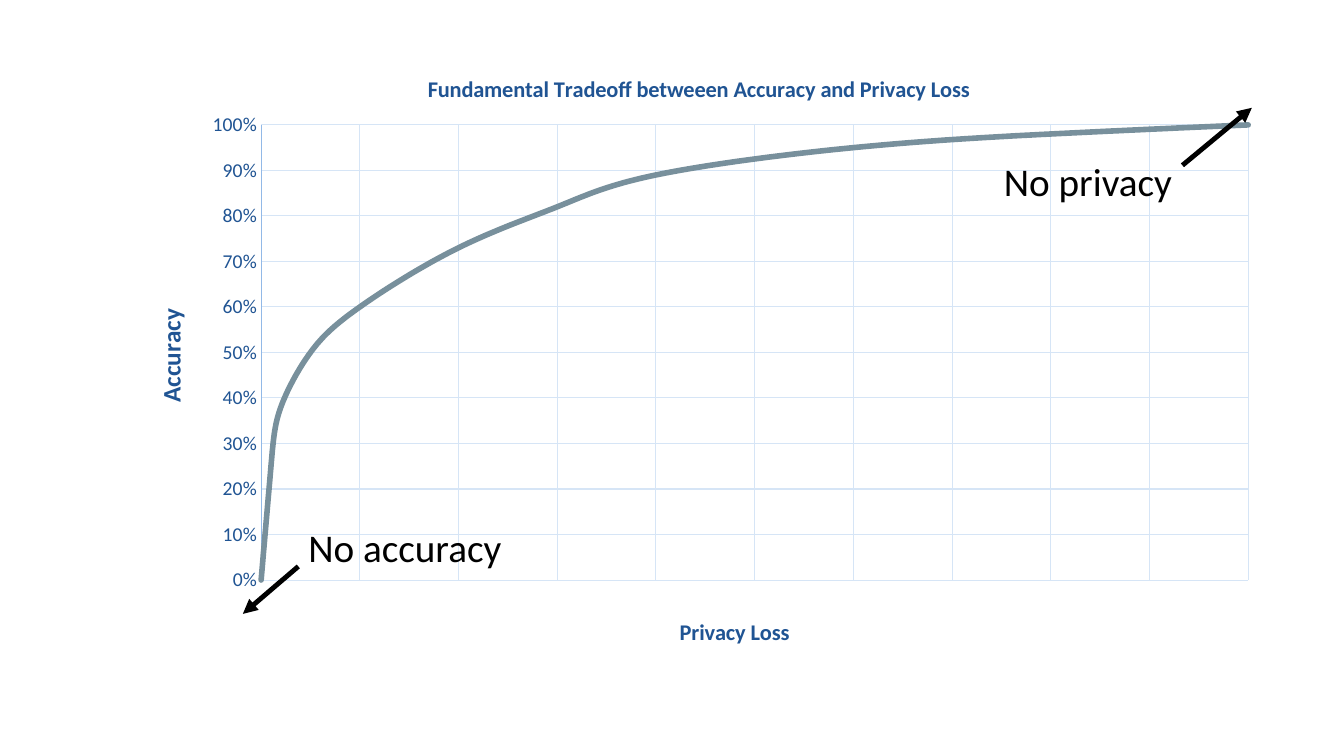
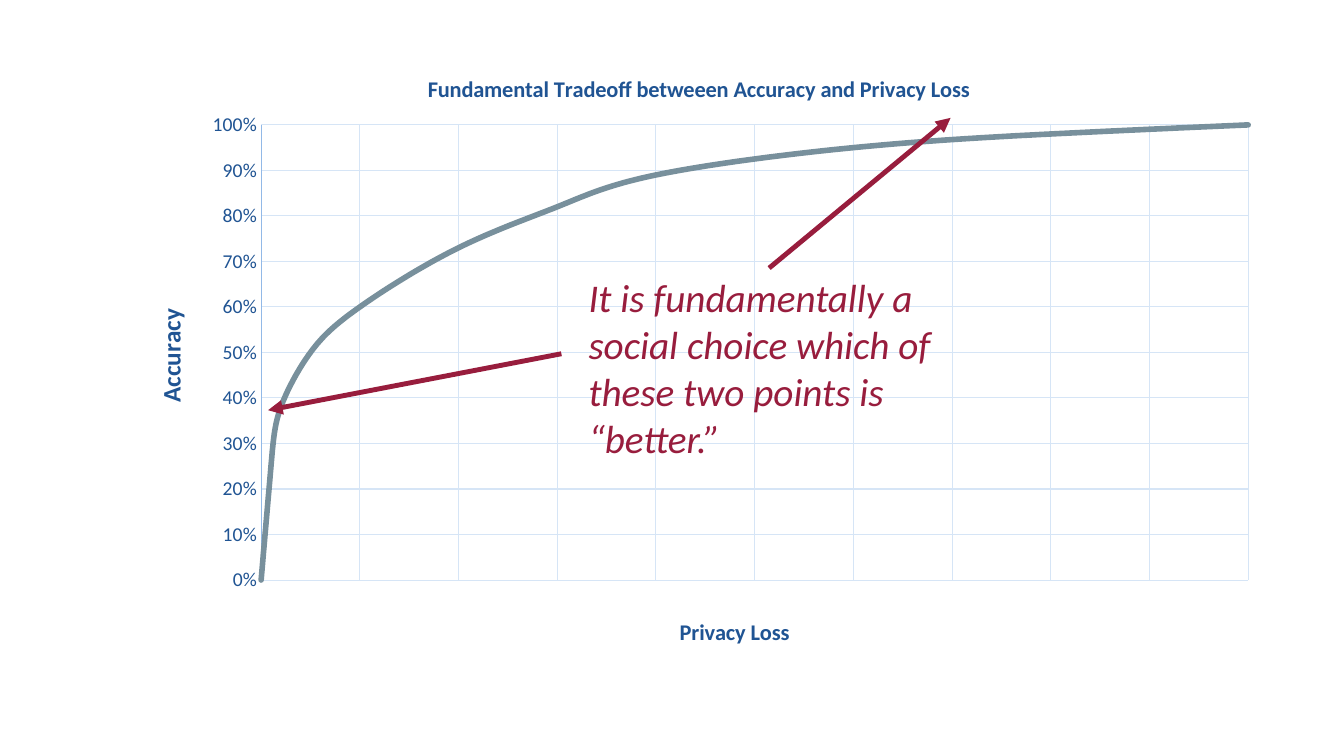
from typing import NamedTuple

from lxml.etree import SubElement
from pptx import Presentation
from pptx.chart.data import XyChartData
from pptx.dml.color import RGBColor
from pptx.enum.chart import XL_CHART_TYPE, XL_TICK_LABEL_POSITION, XL_TICK_MARK
from pptx.enum.shapes import MSO_CONNECTOR
from pptx.enum.text import MSO_AUTO_SIZE
from pptx.oxml.ns import qn
from pptx.util import Pt

COLORS = {
    "ink": "000000",
    "crimson": "981D3D",
    "navy": "205493",
    "axis": "92B9E7",
    "grid": "D6E5F6",
    "curve": "78909C",
}
FONT = "Calibri"
PRIVACY_LOSS = (0, 0.1, 0.2, 0.5, 1, 2, 3, 4, 6, 8, 10)
ACCURACY = (0, 0.25, 0.38, 0.5, 0.6, 0.73, 0.82, 0.89, 0.95, 0.98, 1)


class Note(NamedTuple):
    """A text label with its frame in points."""

    text: str
    left: float
    top: float
    width: float
    height: float


class Arrow(NamedTuple):
    """An arrow from a start point to its head, in points."""

    start_x: float
    start_y: float
    end_x: float
    end_y: float


class Scene(NamedTuple):
    """The annotations laid over the chart on one slide."""

    color: str
    italic: bool
    notes: tuple[Note, ...]
    arrows: tuple[Arrow, ...]


SCENES = (
    Scene(
        "ink",
        False,
        (
            Note("No privacy", 710, 108.7, 171.4, 41),
            Note("No accuracy", 213.1, 370.1, 171.4, 41),
        ),
        (Arrow(213.1, 404.6, 173.5, 438.5), Arrow(844.6, 118.1, 894.2, 77)),
    ),
    Scene(
        "crimson",
        True,
        (
            Note(
                "It is fundamentally a social choice which of these two points is “better.”",
                413.3, 191.5, 296.6, 143.3,
            ),
        ),
        (Arrow(401, 252.7, 191.5, 293), Arrow(549.4, 191.5, 679, 84.2)),
    ),
)


def style_font(font, color: str, size: float, bold: bool = False, italic: bool = False) -> None:
    """Apply the deck font with the given look."""
    values = {"name": FONT, "size": Pt(size), "bold": bold, "italic": italic}
    for name, value in values.items():
        setattr(font, name, value)
    font.color.rgb = RGBColor.from_string(COLORS[color])


def style_line(line, color: str, width: float) -> None:
    """Give a line its colour and width."""
    line.color.rgb = RGBColor.from_string(COLORS[color])
    line.width = Pt(width)


def place(element, index: int, **fractions: float) -> None:
    """Fix a chart part's position as fractions of the chart frame."""
    for old in element.findall(qn("c:layout")):
        element.remove(old)
    layout = SubElement(element, qn("c:layout"))
    element.insert(index, layout)
    manual = SubElement(layout, qn("c:manualLayout"))
    if "w" in fractions:
        SubElement(manual, qn("c:layoutTarget")).set("val", "inner")
    for mode in ("xMode", "yMode"):
        SubElement(manual, qn(f"c:{mode}")).set("val", "edge")
    for name, value in fractions.items():
        SubElement(manual, qn(f"c:{name}")).set("val", str(value))


def add_title(owner, text: str, size: float, x: float, y: float) -> None:
    """Title a chart or an axis at a fixed position."""
    title = getattr(owner, "chart_title", None) or owner.axis_title
    para = title.text_frame.paragraphs[0]
    span = para.add_run()
    span.text = text
    style_font(span.font, "navy", size, bold=True)
    place(title._element, 1, x=x, y=y)


def style_axis(axis, maximum: float, unit: float) -> None:
    """Set the scale and gridlines of an axis."""
    values = {
        "minimum_scale": 0,
        "maximum_scale": maximum,
        "major_unit": unit,
        "has_major_gridlines": True,
        "major_tick_mark": XL_TICK_MARK.NONE,
        "minor_tick_mark": XL_TICK_MARK.NONE,
    }
    for name, value in values.items():
        setattr(axis, name, value)
    style_line(axis.major_gridlines.format.line, "grid", 0.75)


def add_tradeoff_chart(page) -> None:
    """Draw the accuracy curve against privacy loss."""
    data = XyChartData()
    points = data.add_series("Series 1")
    for loss, accuracy in zip(PRIVACY_LOSS, ACCURACY):
        points.add_data_point(loss, accuracy)
    chart = page.shapes.add_chart(
        XL_CHART_TYPE.XY_SCATTER_SMOOTH_NO_MARKERS,
        Pt(90), Pt(32.4), Pt(818), Pt(440.6), data,
    ).chart
    chart.has_legend = False
    style_font(chart.font, "ink", 10)
    plot = chart.plots[0]
    plot.vary_by_categories = False
    curve = plot.series[0]
    curve._element.get_or_add_smooth().val = True
    style_line(curve.format.line, "curve", 4)
    curve.format.line._get_or_add_ln().set("cap", "rnd")

    loss_axis, accuracy_axis = chart.category_axis, chart.value_axis
    style_axis(loss_axis, 10, 1)
    loss_axis.visible = False
    style_axis(accuracy_axis, 1, 0.1)
    style_line(accuracy_axis.format.line, "axis", 0.75)
    labels = accuracy_axis.tick_labels
    labels.number_format = "0%"
    labels.number_format_is_linked = False
    accuracy_axis.tick_label_position = XL_TICK_LABEL_POSITION.NEXT_TO_AXIS
    style_font(labels.font, "navy", 14)

    add_title(chart, "Fundamental Tradeoff betweeen Accuracy and Privacy Loss", 16, 0.26, 0.04)
    add_title(loss_axis, "Privacy Loss", 16, 0.48, 0.92)
    add_title(accuracy_axis, "Accuracy", 18, 0.02, 0.42)
    place(chart._chartSpace.chart.plotArea, 0, x=0.118, y=0.129, w=0.862, h=0.738)


def add_note(page, note: Note, scene: Scene) -> None:
    """Write one label in the scene's style."""
    box = page.shapes.add_textbox(*map(Pt, note[1:]))
    frame = box.text_frame
    frame.word_wrap = True
    frame.auto_size = MSO_AUTO_SIZE.SHAPE_TO_FIT_TEXT
    span = frame.paragraphs[0].add_run()
    span.text = note.text
    style_font(span.font, scene.color, 28, italic=scene.italic)


def add_arrow(page, arrow: Arrow, color: str) -> None:
    """Draw a straight arrow without shadow."""
    connector = page.shapes.add_connector(MSO_CONNECTOR.STRAIGHT, *map(Pt, arrow))
    style_line(connector.line, color, 3.5)
    SubElement(connector.line._get_or_add_ln(), qn("a:tailEnd")).set("type", "triangle")
    SubElement(connector._element.spPr, qn("a:effectLst"))


def main() -> None:
    """Build and save the deck."""
    deck = Presentation()
    deck.slide_width, deck.slide_height = Pt(960), Pt(540)
    for scene in SCENES:
        page = deck.slides.add_slide(deck.slide_layouts[6])
        add_tradeoff_chart(page)
        for note in scene.notes:
            add_note(page, note, scene)
        for arrow in scene.arrows:
            add_arrow(page, arrow, scene.color)
    deck.save("out.pptx")


if __name__ == "__main__":
    main()
